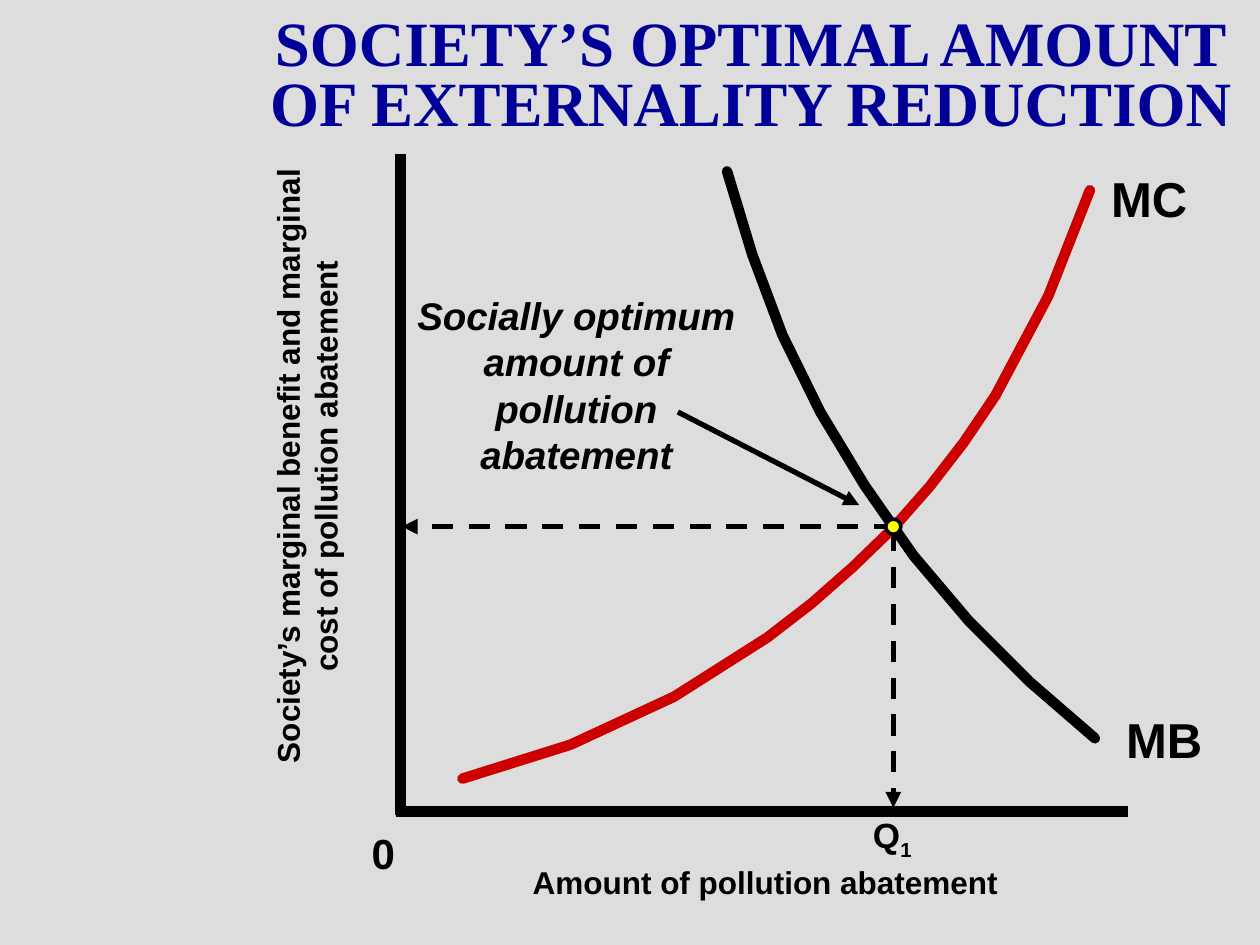
from dataclasses import dataclass

from lxml.etree import SubElement
from pptx import Presentation
from pptx.dml.color import RGBColor
from pptx.enum.dml import MSO_LINE
from pptx.enum.shapes import MSO_CONNECTOR, MSO_SHAPE
from pptx.enum.text import MSO_ANCHOR, MSO_AUTO_SIZE, PP_ALIGN
from pptx.oxml.ns import qn
from pptx.util import Inches, Pt


@dataclass(frozen=True)
class Theme:
    background: RGBColor = RGBColor(0xDD, 0xDD, 0xDD)
    title: RGBColor = RGBColor(0x00, 0x00, 0x99)
    ink: RGBColor = RGBColor(0x00, 0x00, 0x00)
    cost: RGBColor = RGBColor(0xCC, 0x00, 0x00)
    optimum: RGBColor = RGBColor(0xFF, 0xFF, 0x00)
    title_font: str = "Times New Roman"
    font: str = "Arial"
    title_size: int = 36
    curve_size: int = 28
    origin_size: int = 24
    callout_size: int = 22
    quantity_size: int = 20
    axis_size: int = 18
    thick: int = 6
    thin: int = 3


theme = Theme()

prs = Presentation()
prs.slide_width, prs.slide_height = Inches(10), Inches(7.5)
s = prs.slides.add_slide(prs.slide_layouts[5])
s.background.fill.solid()
s.background.fill.fore_color.rgb = theme.background


def add_text(text, box, size, sp=None, font=theme.font, color=theme.ink,
             italic=False, align=PP_ALIGN.CENTER, spacing=None, rotation=0):
    """Write one paragraph per line of text, in a new text box or in sp."""
    left, top, width, height = (Inches(v) for v in box)
    sp = sp or s.shapes.add_textbox(left, top, width, height)
    sp.left, sp.top, sp.width, sp.height = left, top, width, height
    sp.rotation = rotation
    tf = sp.text_frame
    tf.word_wrap = False
    tf.auto_size = MSO_AUTO_SIZE.NONE
    tf.vertical_anchor = MSO_ANCHOR.TOP
    tf.text = text
    for p in tf.paragraphs:
        p.alignment = align
        p.line_spacing = spacing
        for r in p.runs:
            r.font.name, r.font.size = font, Pt(size)
            r.font.bold, r.font.italic = True, italic
            r.font.color.rgb = color
    return tf


def add_line(start, end, width=theme.thin, dash=None, arrow=True):
    """Draw a straight line, with an arrowhead at its end if wanted."""
    line = s.shapes.add_connector(MSO_CONNECTOR.STRAIGHT,
                                  *(Inches(v) for v in start + end))
    line.line.color.rgb = theme.ink
    line.line.width = Pt(width)
    if dash:
        line.line.dash_style = dash
    if arrow:
        SubElement(line.line._get_or_add_ln(), qn("a:tailEnd"), type="triangle")
    SubElement(line._element.spPr, qn("a:effectLst"))


# Title
add_text("SOCIETY’S OPTIMAL AMOUNT\nOF EXTERNALITY REDUCTION",
         (2.03, 0.09, 7.86, 1.06), theme.title_size, sp=s.shapes.title,
         font=theme.title_font, color=theme.title, spacing=0.8)

# Dashed guides from the optimum to both axes
add_line((7.09, 4.21), (7.09, 6.41), dash=MSO_LINE.DASH)
add_line((7.1, 4.18), (3.19, 4.18), dash=MSO_LINE.DASH)

# Marginal cost and marginal benefit curves
marginal_cost = [(3.67, 6.18), (4.53, 5.91), (5.35, 5.53), (6.09, 5.06),
                 (6.44, 4.79), (6.77, 4.5), (7.09, 4.19), (7.38, 3.86),
                 (7.65, 3.51), (7.9, 3.14), (8.32, 2.35), (8.65, 1.51)]
marginal_benefit = [(5.77, 1.36), (5.97, 2.02), (6.21, 2.66), (6.51, 3.27),
                    (6.86, 3.85), (7.25, 4.41), (7.69, 4.93), (8.17, 5.41),
                    (8.69, 5.86)]
for points, color in ((marginal_cost, theme.cost), (marginal_benefit, theme.ink)):
    first, *rest = [(Inches(x), Inches(y)) for x, y in points]
    builder = s.shapes.build_freeform(*first)
    builder.add_line_segments(rest, close=False)
    curve = builder.convert_to_shape()
    curve.shadow.inherit = False
    curve.fill.background()
    curve.line.color.rgb = color
    curve.line.width = Pt(theme.thick)
    ln = curve.line._get_or_add_ln()
    ln.set("cap", "rnd")
    SubElement(ln, qn("a:round"))

# Curve labels
for label, left, top in (("MC", 8.72, 1.29), ("MB", 8.84, 5.58)):
    add_text(label, (left, top, 0.8, 0.56), theme.curve_size, align=PP_ALIGN.LEFT)

# Optimum point
optimum = s.shapes.add_shape(MSO_SHAPE.OVAL, Inches(7.03), Inches(4.12),
                             Inches(0.12), Inches(0.12))
optimum.shadow.inherit = False
optimum.fill.solid()
optimum.fill.fore_color.rgb = theme.optimum
optimum.line.color.rgb = theme.ink
optimum.line.width = Pt(2)

# Callout with its arrow
add_text("Socially optimum\namount of\npollution\nabatement",
         (3.21, 2.27, 2.73, 1.56), theme.callout_size, italic=True)
add_line((5.38, 3.27), (6.82, 4.01))

# Axes and their labels
add_text("0", (2.85, 6.52, 0.38, 0.5), theme.origin_size, align=PP_ALIGN.LEFT)
add_text("Society’s marginal benefit and marginal\ncost of pollution abatement",
         (-0.03, 3.35, 4.92, 0.7), theme.axis_size, rotation=270)
add_text("Amount of pollution abatement", (4.13, 6.8, 3.89, 0.4), theme.axis_size)
add_line((3.18, 1.22), (3.18, 6.47), width=theme.thick, arrow=False)
add_line((3.14, 6.44), (8.95, 6.44), width=theme.thick, arrow=False)

# Optimal quantity, with its subscript
tf = add_text("Q", (6.83, 6.41, 0.52, 0.43), theme.quantity_size,
              align=PP_ALIGN.LEFT)
r = tf.paragraphs[0].add_run()
r.text = "1"
r.font.name, r.font.size, r.font.bold = theme.font, Pt(theme.quantity_size), True
r.font.color.rgb = theme.ink
r.font._element.set("baseline", "-25000")

prs.save("out.pptx")
